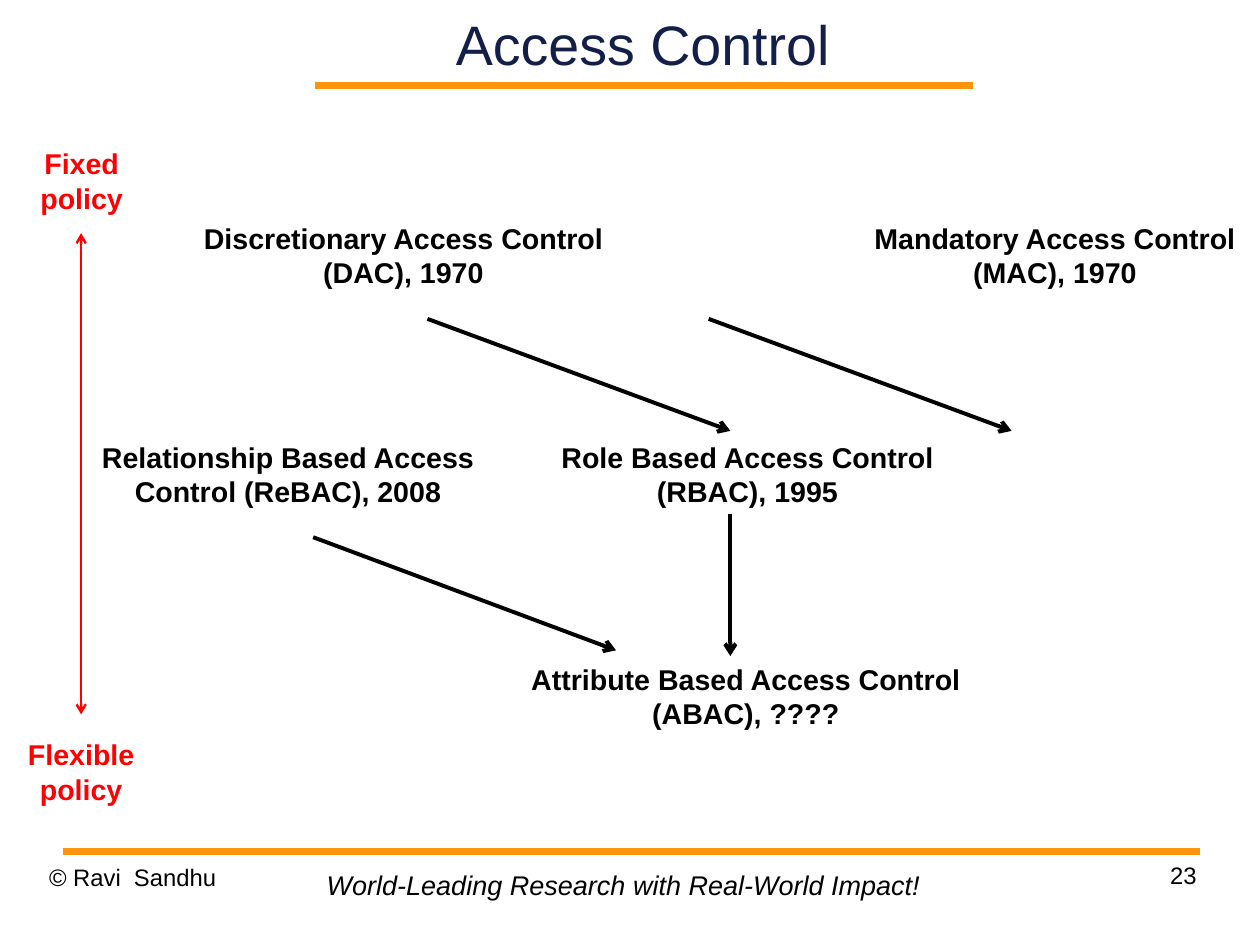
from lxml import etree
from pptx import Presentation
from pptx.dml.color import RGBColor
from pptx.enum.shapes import MSO_CONNECTOR
from pptx.enum.text import MSO_ANCHOR, PP_ALIGN
from pptx.oxml.ns import qn
from pptx.util import Inches, Pt

STRAIGHT = MSO_CONNECTOR.STRAIGHT
LEFT, CENTER, RIGHT = PP_ALIGN.LEFT, PP_ALIGN.CENTER, PP_ALIGN.RIGHT
TOP, MIDDLE = MSO_ANCHOR.TOP, MSO_ANCHOR.MIDDLE
BLACK = RGBColor(0x00, 0x00, 0x00)
RED = RGBColor(0xFF, 0x00, 0x00)
ORANGE = RGBColor(0xFF, 0x95, 0x0E)
NAVY = RGBColor(0x13, 0x1F, 0x49)
CM_PER_INCH = 2.54

prs = Presentation()
# The page is 28 by 21 cm
prs.slide_width = Inches(28 / CM_PER_INCH)
prs.slide_height = Inches(21 / CM_PER_INCH)
s = prs.slides.add_slide(prs.slide_layouts[6])


def add_text(text, box, size, color=BLACK, align=CENTER, bold=False,
             italic=False, inset=True, wrap=True, anchor=TOP):
    sp = s.shapes.add_textbox(*(Inches(v) for v in box))
    tf = sp.text_frame
    tf.word_wrap = wrap
    tf.vertical_anchor = anchor
    tf.margin_left = tf.margin_right = Inches(0.1 if inset else 0)
    tf.margin_top = tf.margin_bottom = Inches(0.05 if inset else 0)
    tf.text = text
    for p in tf.paragraphs:
        p.alignment = align
        for r in p.runs:
            r.font.name = "Arial"
            r.font.size = Pt(size)
            r.font.bold = bold
            r.font.italic = italic
            r.font.color.rgb = color


def add_line(x1, y1, x2, y2, color, width, arrow_ends=()):
    """Draw a line; arrow_ends may hold "headEnd" (start) and "tailEnd" (finish)."""
    line = s.shapes.add_connector(STRAIGHT, *(Inches(v) for v in (x1, y1, x2, y2)))
    line.line.color.rgb = color
    line.line.width = Pt(width)
    ln = line.line._get_or_add_ln()
    for end in arrow_ends:
        etree.SubElement(ln, qn("a:" + end), type="arrow")
    etree.SubElement(line._element.spPr, qn("a:effectLst"))


# Title, rules and footer
add_line(2.76, 0.75, 8.51, 0.75, ORANGE, 4.31)
add_line(0.55, 7.45, 10.5, 7.45, ORANGE, 4.31)
add_text("© Ravi  Sandhu", (0.43, 7.55, 2.57, 0.57), 15, align=LEFT, inset=False)
add_text("23", (7.9, 7.53, 2.57, 0.57), 15, align=RIGHT, inset=False)
add_text("World-Leading Research with Real-World Impact!", (2.76, 7.55, 5.44, 0.39),
         17, align=LEFT, italic=True, wrap=False)
add_text("Access Control", (2.41, 0, 6.43, 0.75), 35, NAVY, inset=False, anchor=MIDDLE)

# Access control models
models = [
    ("Discretionary Access Control (DAC), 1970", 1.68, 1.88, 3.7),
    ("Mandatory Access Control (MAC), 1970", 7.38, 1.88, 3.7),
    ("Relationship Based Access Control (ReBAC), 2008", 0.67, 3.8, 3.7),
    ("Role Based Access Control (RBAC), 1995", 4.69, 3.8, 3.7),
    ("Attribute Based Access Control (ABAC), ????", 4.47, 5.74, 4.11),
]
for name, x, y, width in models:
    add_text(name, (x, y, width, 0.71), 18, bold=True)

successions = [
    (3.74, 2.79, 6.39, 3.77),
    (6.2, 2.79, 8.85, 3.77),
    (2.74, 4.7, 5.39, 5.69),
    (6.39, 4.5, 6.39, 5.74),
]
for ends in successions:
    add_line(*ends, BLACK, 2.5, ["tailEnd"])

# Policy scale
add_text("Fixed\npolicy", (0.25, 1.23, 0.93, 0.71), 18, RED, bold=True, wrap=False)
add_line(0.71, 2.04, 0.71, 6.25, RED, 1.5, ["headEnd", "tailEnd"])
add_text("Flexible\npolicy", (0.14, 6.4, 1.14, 0.71), 18, RED, bold=True, wrap=False)

prs.save("out.pptx")
